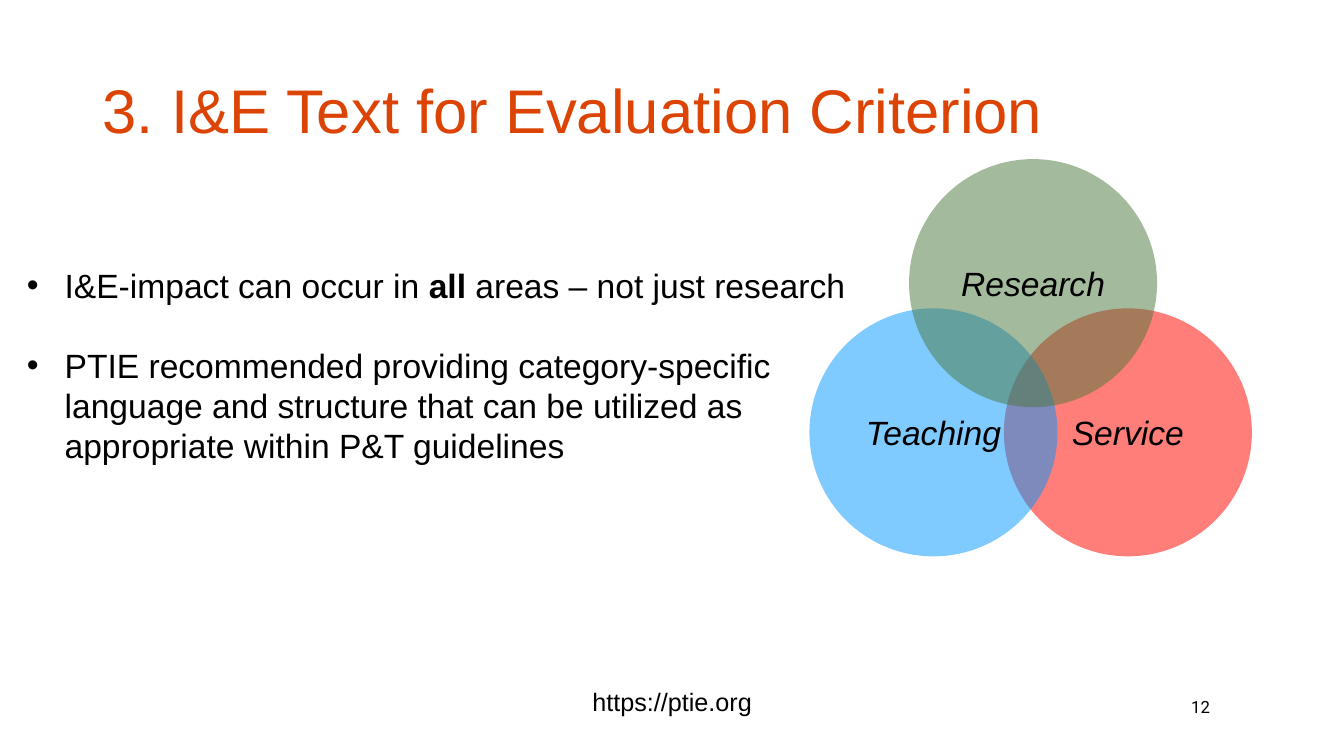
"""Build the slide on I&E text for evaluation criteria, with its three overlapping areas."""
import pptx
import pptx.dml.color
import pptx.enum.shapes
import pptx.enum.text
import pptx.oxml
import pptx.oxml.ns
import pptx.util

Cm = pptx.util.Cm
Pt = pptx.util.Pt
ALIGN = pptx.enum.text.PP_ALIGN
ANCHOR = pptx.enum.text.MSO_ANCHOR


def color(hex_string):
    return pptx.dml.color.RGBColor.from_string(hex_string)


def write(frame, paragraphs, size=24, font="Arial", ink="000000", italic=False,
          align=ALIGN.LEFT, anchor=ANCHOR.TOP, line_spacing=None, gap=0, bullet=None):
    """Fill a text frame; each paragraph is a list of strings, every second one bold."""
    frame.word_wrap = True
    frame.vertical_anchor = anchor
    for index, pieces in enumerate(paragraphs):
        paragraph = frame.add_paragraph() if index else frame.paragraphs[0]
        paragraph.alignment = align
        paragraph.line_spacing = line_spacing
        if index:
            paragraph.space_before = Pt(gap)
        if bullet:
            properties = paragraph._p.get_or_add_pPr()
            properties.set("marL", str(Cm(0.95)))
            properties.set("indent", str(-Cm(0.95)))
            for tag, key, value in (("a:buFont", "typeface", font), ("a:buChar", "char", bullet)):
                mark = pptx.oxml.xmlchemy.OxmlElement(tag)
                mark.set(key, value)
                properties.append(mark)
        for position, piece in enumerate(pieces):
            run = paragraph.add_run()
            run.text = piece
            run.font.size = Pt(size)
            run.font.name = font
            run.font.bold = position % 2 == 1
            run.font.italic = italic
            run.font.color.rgb = color(ink)


presentation = pptx.Presentation()
presentation.slide_width = Cm(33.87)
presentation.slide_height = Cm(19.05)
slide = presentation.slides.add_slide(presentation.slide_layouts[6])
shapes = slide.shapes

title = shapes.add_textbox(Cm(2.34), Cm(1.02), Cm(29.21), Cm(3.68))
write(title.text_frame, [["3. I&E Text for Evaluation Criterion"]], size=44, ink="DC4405",
      anchor=ANCHOR.MIDDLE, line_spacing=0.9)

page_number = shapes.add_textbox(Cm(29.77), Cm(17.3), Cm(1.75), Cm(1.02))
write(page_number.text_frame, [["12"]], size=12, font="Roboto", anchor=ANCHOR.MIDDLE)

diameter = Cm(6.25)
areas = [
    ("Service", 25.3, 7.77, "FF7E79", 100),
    ("Teaching", 20.4, 7.77, "0096FF", 50),
    ("Research", 22.91, 4.01, "4A773C", 50),
]
for name, left, top, fill, opacity in areas:
    area = shapes.add_shape(pptx.enum.shapes.MSO_SHAPE.OVAL, Cm(left), Cm(top), diameter, diameter)
    area.shadow.inherit = False
    area.line.fill.background()
    area.fill.solid()
    area.fill.fore_color.rgb = color(fill)
    if opacity < 100:
        alpha = pptx.oxml.xmlchemy.OxmlElement("a:alpha")
        alpha.set("val", str(opacity * 1000))
        area._element.spPr.find(".//" + pptx.oxml.ns.qn("a:srgbClr")).append(alpha)
    write(area.text_frame, [[name]], italic=True, align=ALIGN.CENTER, anchor=ANCHOR.MIDDLE)

points = shapes.add_textbox(Cm(0.43), Cm(6.55), Cm(21.59), Cm(7.44))
write(points.text_frame, [
    ["I&E-impact can occur in ", "all", " areas – not just research"],
    ["PTIE recommended providing category-specific language and structure "
     "that can be utilized as appropriate within P&T guidelines"],
], gap=28, bullet="•")

website = shapes.add_textbox(Cm(11.15), Cm(17.17), Cm(11.58), Cm(1.02))
write(website.text_frame, [["https://ptie.org"]], size=18, align=ALIGN.CENTER)

presentation.save("out.pptx")
